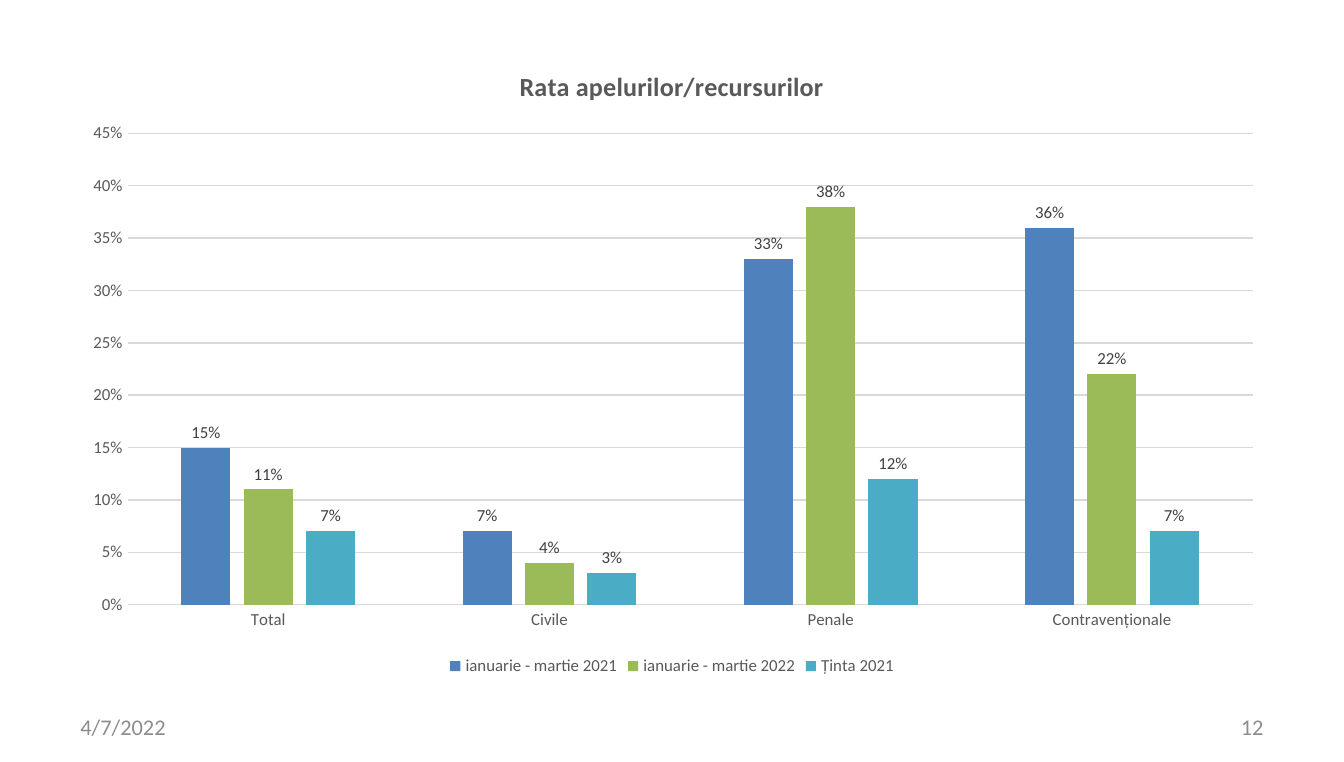
from lxml.etree import SubElement
from pptx import Presentation
from pptx.chart.data import CategoryChartData
from pptx.dml.color import RGBColor
from pptx.enum.chart import XL_CHART_TYPE, XL_LABEL_POSITION, XL_LEGEND_POSITION, XL_TICK_MARK
from pptx.enum.text import MSO_ANCHOR, PP_ALIGN
from pptx.oxml.ns import qn
from pptx.util import Pt

PX = 9144
SIZE = (1000, 567)
FRAME = (50, 33, 900, 474)
TITLE = "Rata apelurilor/recursurilor"
CATS = ["Total", "Civile", "Penale", "Contravenționale"]
SERIES = [
    ("ianuarie - martie 2021", "4F81BD", (0.15, 0.07, 0.33, 0.36)),
    ("ianuarie - martie 2022", "9BBB59", (0.11, 0.04, 0.38, 0.22)),
    ("Ținta 2021", "4BACC6", (0.07, 0.03, 0.12, 0.07)),
]
FOOTERS = [
    ("4/7/2022", 50, PP_ALIGN.LEFT),
    ("12", 717, PP_ALIGN.RIGHT),
]
GREY, RULE = "595959", "D9D9D9"


def color(code):
    return RGBColor.from_string(code)


def style(font, size, code, bold=False):
    font.name, font.size, font.bold = "Calibri", Pt(size), bold
    font.color.rgb = color(code)


def rule(line):
    line.color.rgb = color(RULE)
    line.width = Pt(0.75)


def place(owner, index, **spots):
    for old in owner.findall(qn("c:layout")):
        owner.remove(old)
    layout = SubElement(owner, qn("c:layout"))
    owner.insert(index, layout)
    manual = SubElement(layout, qn("c:manualLayout"))
    for name, value in spots.items():
        SubElement(manual, qn(f"c:{name}")).set("val", str(value))


def add_chart(slide):
    data = CategoryChartData(number_format="0%")
    data.categories = CATS
    for name, _, values in SERIES:
        data.add_series(name, values)
    box = [n * PX for n in FRAME]
    chart = slide.shapes.add_chart(XL_CHART_TYPE.COLUMN_CLUSTERED, *box, data).chart
    style(chart.font, 10, "000000")

    chart.has_title = True
    title = chart.chart_title
    title.text_frame.text = TITLE
    style(title.text_frame.paragraphs[0].font, 14, GREY, True)
    title.include_in_layout = False
    root = chart._chartSpace
    place(root.find(f".//{qn('c:title')}"), 1,
          xMode="edge", yMode="edge", x=0.37, y=0.03)

    chart.has_legend = True
    chart.legend.position = XL_LEGEND_POSITION.BOTTOM
    chart.legend.include_in_layout = False
    style(chart.legend.font, 9, GREY)

    across, up = chart.category_axis, chart.value_axis
    for axis in (across, up):
        axis.major_tick_mark = axis.minor_tick_mark = XL_TICK_MARK.NONE
        style(axis.tick_labels.font, 9, GREY)
    rule(across.format.line)
    up.format.line.fill.background()
    up.has_major_gridlines = True
    rule(up.major_gridlines.format.line)
    up.minimum_scale, up.maximum_scale, up.major_unit = 0, 0.45, 0.05
    up.tick_labels.number_format = "0%"
    up.tick_labels.number_format_is_linked = False

    plot = chart.plots[0]
    plot.gap_width, plot.overlap, plot.vary_by_categories = 219, -27, False
    for bar, (_, code, _) in zip(plot.series, SERIES):
        bar.format.fill.solid()
        bar.format.fill.fore_color.rgb = color(code)
        labels = bar.data_labels
        labels.show_value = True
        labels.position = XL_LABEL_POSITION.OUTSIDE_END
        labels.number_format = "0%"
        labels.number_format_is_linked = False
        style(labels.font, 9, "404040")

    place(root.find(f".//{qn('c:plotArea')}"), 0, layoutTarget="inner",
          xMode="edge", yMode="edge", x=0.05, y=0.14, w=0.93, h=0.74)


def add_footer(slide, text, left, align):
    frame = slide.shapes.add_textbox(left * PX, 526 * PX, 233 * PX, 30 * PX).text_frame
    frame.word_wrap = True
    frame.vertical_anchor = MSO_ANCHOR.MIDDLE
    line = frame.paragraphs[0]
    line.text, line.alignment, line.space_after = text, align, Pt(6)
    style(line.font, 12, "8C8C8C")


def main():
    """Build the slide on the rate of appeals."""
    deck = Presentation()
    deck.slide_width, deck.slide_height = [n * PX for n in SIZE]
    slide = deck.slides.add_slide(deck.slide_layouts[6])
    add_chart(slide)
    for footer in FOOTERS:
        add_footer(slide, *footer)
    deck.save("out.pptx")


if __name__ == "__main__":
    main()
